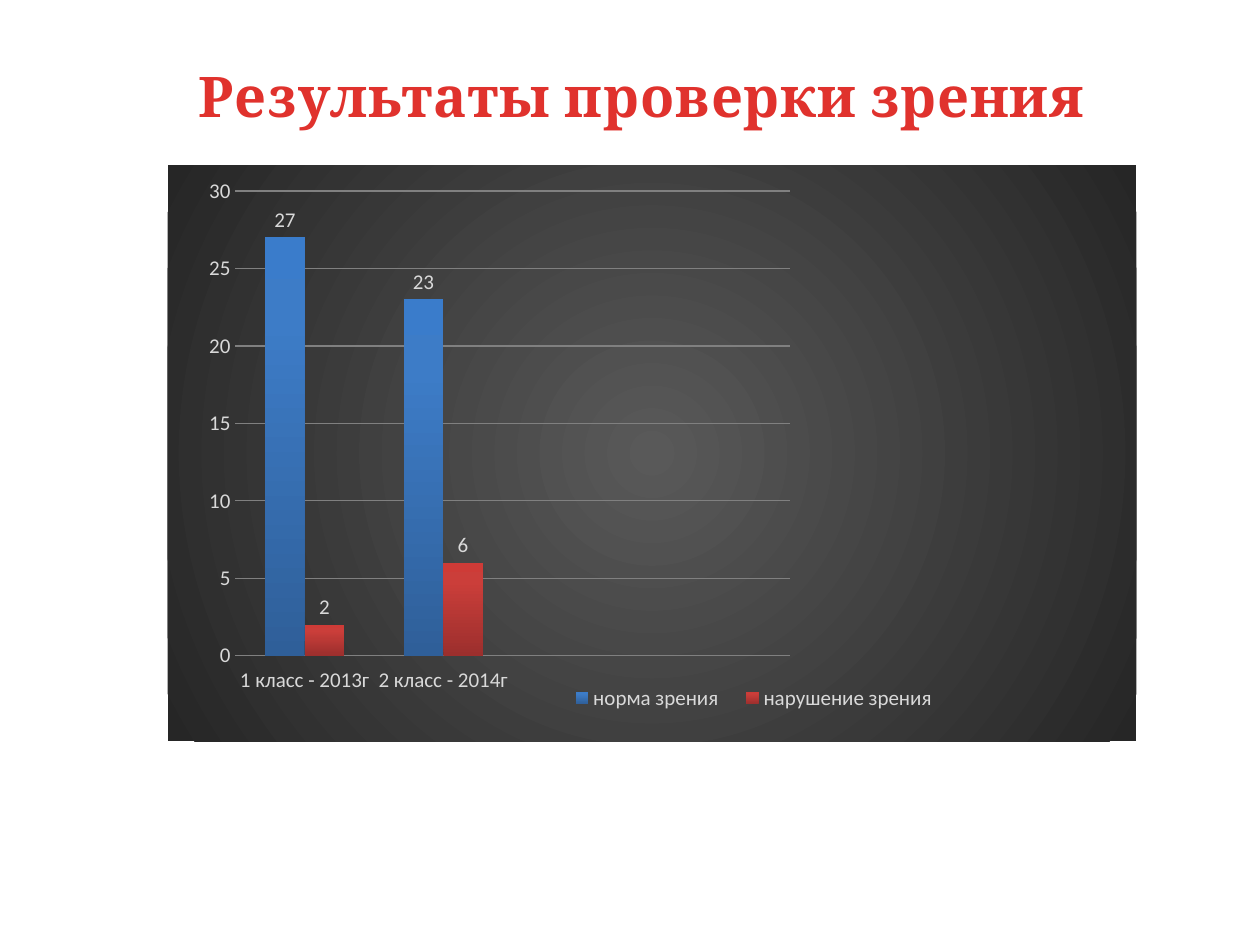
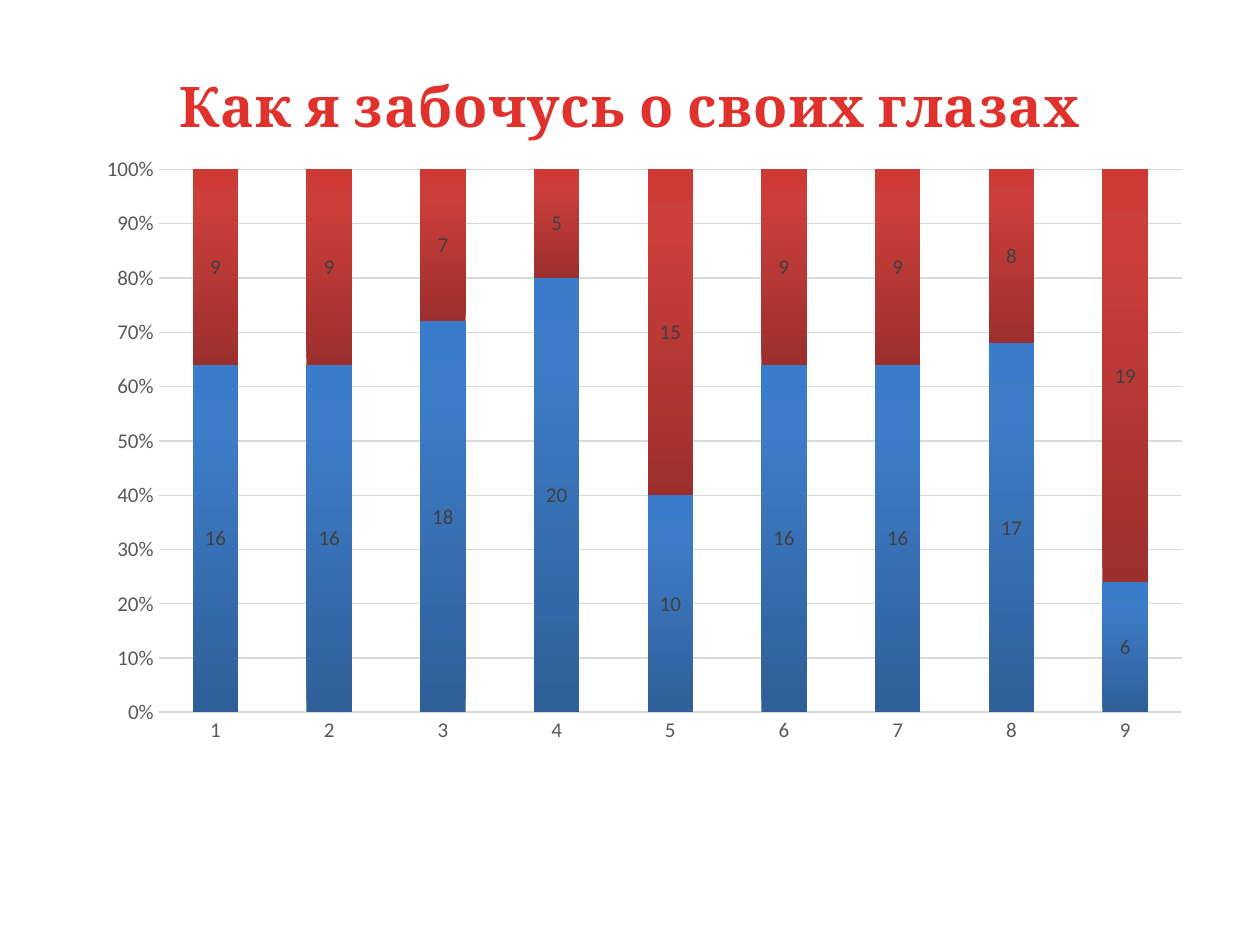
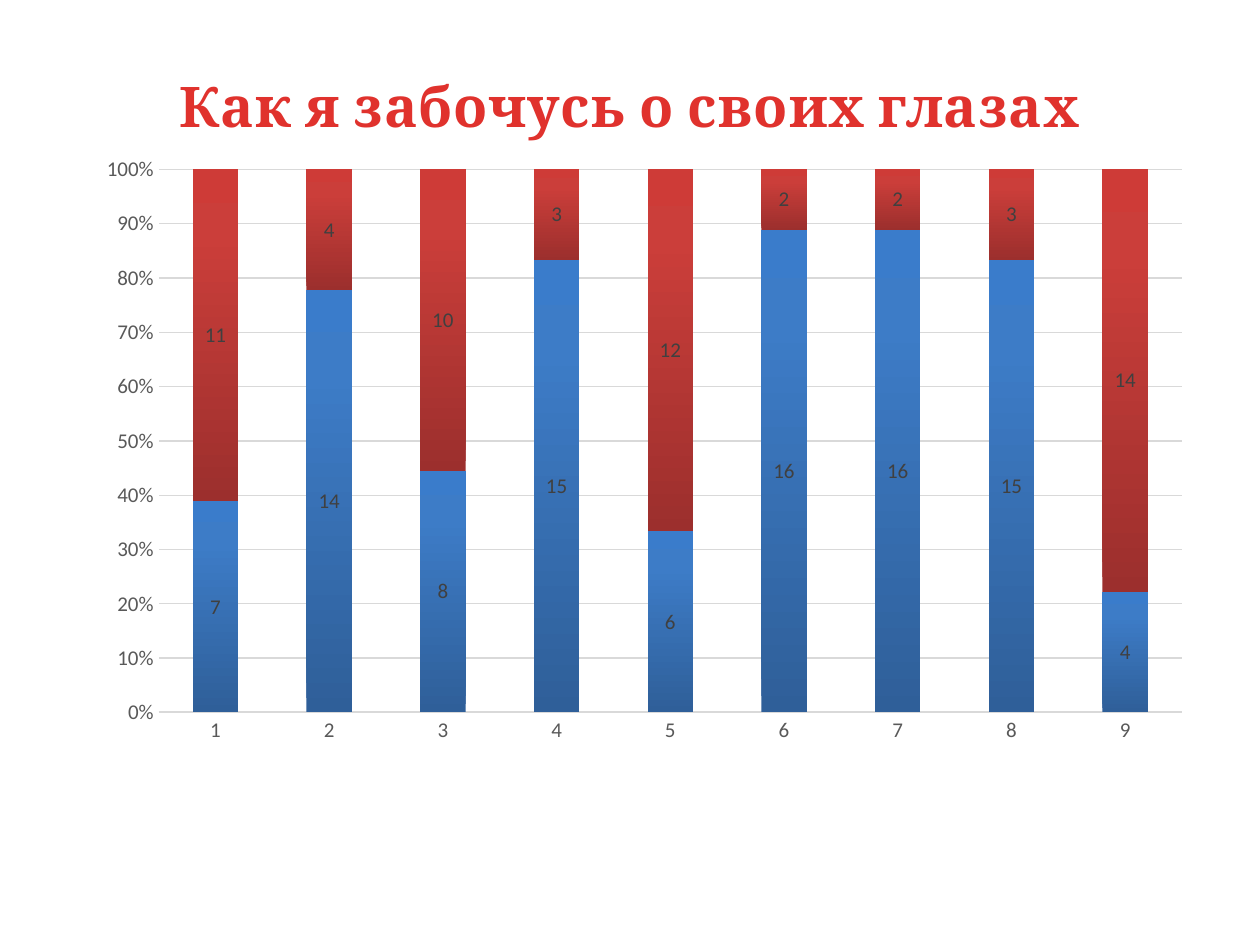
from dataclasses import dataclass
from typing import Optional

from pptx import Presentation
from pptx.chart.data import CategoryChartData
from pptx.dml.color import RGBColor
from pptx.enum.chart import (
    XL_CHART_TYPE,
    XL_LABEL_POSITION,
    XL_LEGEND_POSITION,
    XL_TICK_MARK,
)
from pptx.enum.text import MSO_AUTO_SIZE, PP_ALIGN
from pptx.oxml import parse_xml
from pptx.oxml.ns import nsdecls, qn
from pptx.util import Cm, Pt

CLUSTERED = XL_CHART_TYPE.COLUMN_CLUSTERED
STACKED = XL_CHART_TYPE.COLUMN_STACKED_100
OUTSIDE_END = XL_LABEL_POSITION.OUTSIDE_END
CENTER_LABEL = XL_LABEL_POSITION.CENTER
LEGEND_BOTTOM = XL_LEGEND_POSITION.BOTTOM
TICK_NONE = XL_TICK_MARK.NONE
TICK_OUTSIDE = XL_TICK_MARK.OUTSIDE
ALIGN_CENTER = PP_ALIGN.CENTER
FIT_SHAPE = MSO_AUTO_SIZE.SHAPE_TO_FIT_TEXT

CHART_FONT = "Calibri"
TITLE_FONT = "Cambria"


@dataclass(frozen=True)
class Gradient:
    stops: tuple[tuple[int, str], ...]
    angle: Optional[int] = None


@dataclass(frozen=True)
class Box:
    left: float
    top: float
    width: float
    height: float

    def lengths(self) -> tuple[Cm, Cm, Cm, Cm]:
        return Cm(self.left), Cm(self.top), Cm(self.width), Cm(self.height)


@dataclass(frozen=True)
class ChartStyle:
    kind: int
    box: Box
    axis_color: str
    label_color: str
    grid_color: str
    label_position: int
    number_format: str
    major_unit: float
    maximum: float
    category_tick: int
    category_line: Optional[str] = None
    overlap: int = 0
    background: Optional[Gradient] = None
    plot_layout: Optional[Box] = None
    legend_layout: Optional[Box] = None


@dataclass(frozen=True)
class ChartSlide:
    title: str
    title_box: Box
    style: ChartStyle
    categories: tuple[str, ...]
    series: dict[str, tuple[Optional[int], ...]]


TITLE_GRADIENT = Gradient(((25, "E0322D"), (100, "A2201C")), 90)
SERIES_GRADIENTS = (
    Gradient(((0, "2F5F99"), (80, "3D7CC7"), (100, "3A7CCB")), 270),
    Gradient(((0, "9C2F2D"), (80, "CB3E3A"), (100, "CE3B37")), 270),
)

VISION_STYLE = ChartStyle(
    kind=CLUSTERED,
    box=Box(3.38, 3.33, 19.53, 11.61),
    axis_color="D9D9D9",
    label_color="D9D9D9",
    grid_color="808080",
    label_position=OUTSIDE_END,
    number_format="General",
    major_unit=5,
    maximum=30,
    category_tick=TICK_OUTSIDE,
    background=Gradient(((0, "595959"), (100, "262626"))),
    plot_layout=Box(0.07, 0.045, 0.572, 0.807),
    legend_layout=Box(0.4, 0.89, 0.41, 0.07),
)
CARE_STYLE = ChartStyle(
    kind=STACKED,
    box=Box(1.7, 2.92, 22.58, 12.29),
    axis_color="595959",
    label_color="404040",
    grid_color="D9D9D9",
    label_position=CENTER_LABEL,
    number_format="0%",
    major_unit=0.1,
    maximum=1,
    category_tick=TICK_NONE,
    category_line="D9D9D9",
    overlap=100,
)

CARE_TITLE = "Как я забочусь о своих глазах"
CARE_TITLE_BOX = Box(2.97, 1.32, 19.46, 1.63)
QUESTIONS = tuple(str(number) for number in range(1, 10))

SLIDES = (
    ChartSlide(
        "Результаты проверки зрения",
        Box(3.51, 1.12, 18.85, 1.63),
        VISION_STYLE,
        ("1 класс - 2013г", "2 класс - 2014г", "", ""),
        {
            "норма зрения": (27, 23, None, None),
            "нарушение зрения": (2, 6, None, None),
        },
    ),
    ChartSlide(
        CARE_TITLE,
        CARE_TITLE_BOX,
        CARE_STYLE,
        QUESTIONS,
        {
            "Series 1": (16, 16, 18, 20, 10, 16, 16, 17, 6),
            "Series 2": (9, 9, 7, 5, 15, 9, 9, 8, 19),
        },
    ),
    ChartSlide(
        CARE_TITLE,
        CARE_TITLE_BOX,
        CARE_STYLE,
        QUESTIONS,
        {
            "Series 1": (7, 14, 8, 15, 6, 16, 16, 15, 4),
            "Series 2": (11, 4, 10, 3, 12, 2, 2, 3, 14),
        },
    ),
)


def color(value: str) -> RGBColor:
    return RGBColor.from_string(value)


def gradient_fill(gradient: Gradient):
    stops = "".join(
        f'<a:gs pos="{position * 1000}"><a:srgbClr val="{value}"/></a:gs>'
        for position, value in gradient.stops
    )
    if gradient.angle is None:
        direction = (
            '<a:path path="circle"><a:fillToRect l="50000" t="50000" '
            'r="50000" b="50000"/></a:path>'
        )
    else:
        direction = f'<a:lin ang="{gradient.angle * 60000}" scaled="0"/>'
    return parse_xml(
        f'<a:gradFill {nsdecls("a")} rotWithShape="1">'
        f"<a:gsLst>{stops}</a:gsLst>{direction}</a:gradFill>"
    )


def set_layout(element, index: int, box: Box, target: str = "") -> None:
    for layout in element.findall(qn("c:layout")):
        element.remove(layout)
    fractions = (
        f'<c:xMode val="edge"/><c:yMode val="edge"/>'
        f'<c:x val="{box.left}"/><c:y val="{box.top}"/>'
        f'<c:w val="{box.width}"/><c:h val="{box.height}"/>'
    )
    element.insert(index, parse_xml(
        f'<c:layout {nsdecls("c")}><c:manualLayout>{target}{fractions}'
        f"</c:manualLayout></c:layout>"
    ))


def set_font(font, value: str, size: int = 12) -> None:
    font.name = CHART_FONT
    font.size = Pt(size)
    font.color.rgb = color(value)


def style_axes(chart, style: ChartStyle) -> None:
    category_axis, value_axis = chart.category_axis, chart.value_axis
    for axis in (category_axis, value_axis):
        set_font(axis.tick_labels.font, style.axis_color)
        axis.minor_tick_mark = TICK_NONE
        axis.format.line.fill.background()
    category_axis.major_tick_mark = style.category_tick
    if style.category_line:
        category_axis.format.line.color.rgb = color(style.category_line)
        category_axis.format.line.width = Pt(1)
    value_axis.major_tick_mark = TICK_NONE
    value_axis.minimum_scale = 0
    value_axis.maximum_scale = style.maximum
    value_axis.major_unit = style.major_unit
    value_axis.tick_labels.number_format = style.number_format
    value_axis.tick_labels.number_format_is_linked = False
    value_axis.has_major_gridlines = True
    grid_line = value_axis.major_gridlines.format.line
    grid_line.color.rgb = color(style.grid_color)
    grid_line.width = Pt(0.75)


def style_series(plot, style: ChartStyle) -> None:
    plot.gap_width = 150
    plot.overlap = style.overlap
    plot.vary_by_categories = False
    for series, gradient in zip(plot.series, SERIES_GRADIENTS):
        series.invert_if_negative = False
        series._element.get_or_add_spPr().append(gradient_fill(gradient))
        labels = series.data_labels
        labels.show_value = True
        labels.position = style.label_position
        set_font(labels.font, style.label_color)


def add_legend(chart, style: ChartStyle) -> None:
    chart.has_legend = style.legend_layout is not None
    if style.legend_layout:
        legend = chart.legend
        legend.position = LEGEND_BOTTOM
        legend.include_in_layout = False
        set_font(legend.font, style.axis_color)
        set_layout(legend._element, 1, style.legend_layout)


def add_column_chart(slide, content: ChartSlide) -> None:
    style = content.style
    data = CategoryChartData()
    data.categories = content.categories
    for name, values in content.series.items():
        data.add_series(name, values)
    chart = slide.shapes.add_chart(style.kind, *style.box.lengths(), data).chart
    chart.has_title = False
    set_font(chart.font, "000000", 10)
    style_axes(chart, style)
    style_series(chart.plots[0], style)
    add_legend(chart, style)
    chart_space = chart._chartSpace
    if style.plot_layout:
        plot_area = chart_space.chart.plotArea
        set_layout(plot_area, 0, style.plot_layout, '<c:layoutTarget val="inner"/>')
    if style.background:
        properties = parse_xml(f'<c:spPr {nsdecls("c", "a")}/>')
        properties.append(gradient_fill(style.background))
        chart_space.chart.addnext(properties)


def add_title(slide, text: str, box: Box) -> None:
    text_frame = slide.shapes.add_textbox(*box.lengths()).text_frame
    text_frame.word_wrap = False
    text_frame.auto_size = FIT_SHAPE
    text_frame.text = text
    paragraph = text_frame.paragraphs[0]
    paragraph.alignment = ALIGN_CENTER
    run = paragraph.runs[0]
    run.font.name = TITLE_FONT
    run.font.size = Pt(32)
    run.font.bold = True
    properties = run._r.get_or_add_rPr()
    properties.set("spc", "50")
    properties.insert(0, gradient_fill(TITLE_GRADIENT))


def main() -> None:
    presentation = Presentation()
    presentation.slide_width = Cm(25.4)
    presentation.slide_height = Cm(19.05)
    blank_layout = presentation.slide_layouts[6]
    for content in SLIDES:
        slide = presentation.slides.add_slide(blank_layout)
        add_column_chart(slide, content)
        add_title(slide, content.title, content.title_box)
    presentation.save("out.pptx")


if __name__ == "__main__":
    main()
